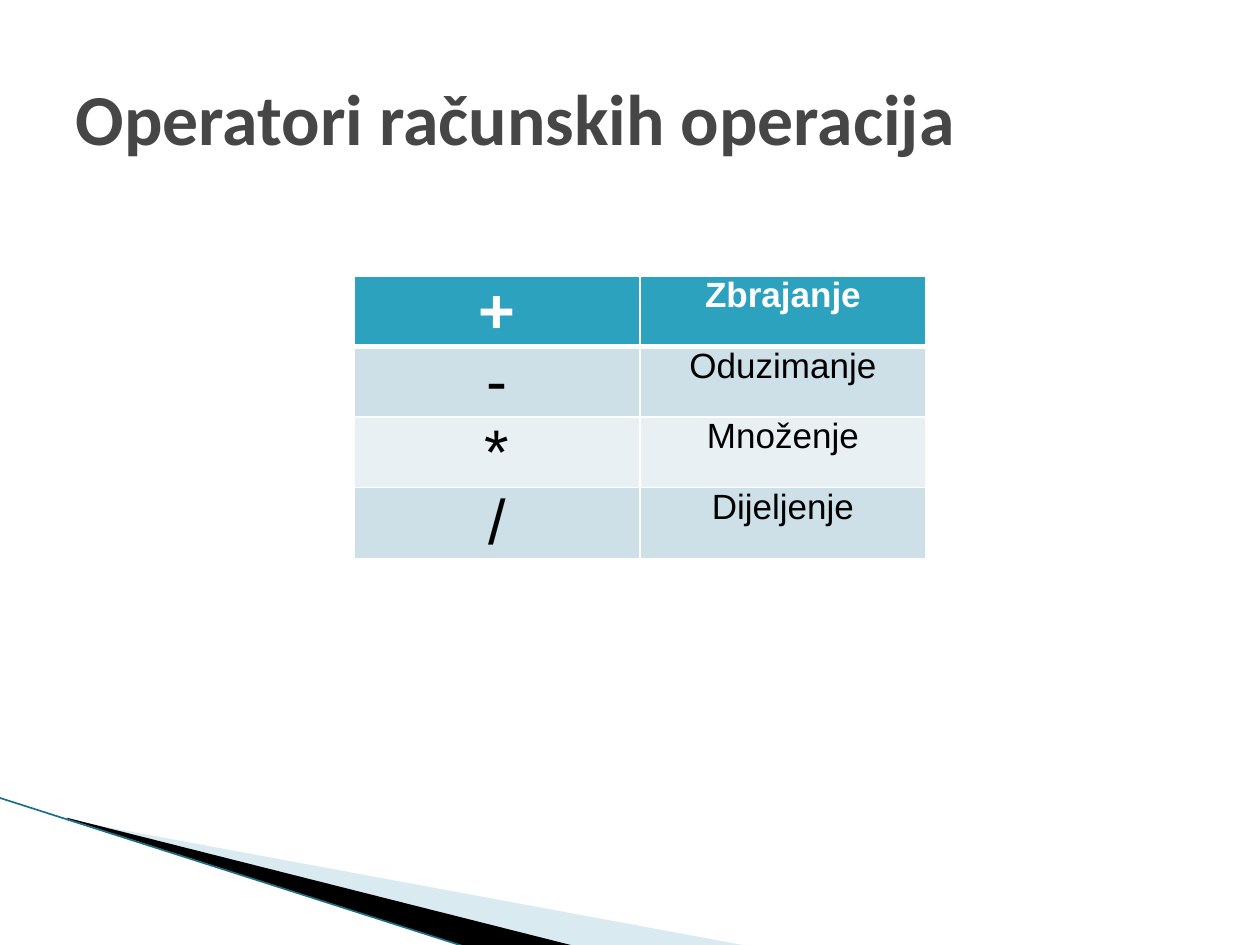
from typing import NamedTuple

from lxml.etree import SubElement
from pptx import Presentation
from pptx.dml.color import RGBColor
from pptx.enum.shapes import MSO_CONNECTOR as Connector
from pptx.enum.text import MSO_ANCHOR as Anchor, MSO_AUTO_SIZE as AutoSize, PP_ALIGN as Align
from pptx.oxml.ns import qn
from pptx.util import Inches, Pt

WHITE = RGBColor(0xFF, 0xFF, 0xFF)
BLACK = RGBColor(0x00, 0x00, 0x00)
TITLE_GREY = RGBColor(0x46, 0x46, 0x46)
HEADER_TEAL = RGBColor(0x2D, 0xA2, 0xBF)
BAND_DARK = RGBColor(0xCD, 0xE0, 0xE8)
BAND_LIGHT = RGBColor(0xE8, 0xF0, 0xF4)
WEDGE_BLUE = RGBColor(0xA0, 0xCB, 0xDC)
EDGE_TEAL = RGBColor(0x1C, 0x70, 0x83)


class Wedge(NamedTuple):
    frame: tuple[float, float, float, float]
    points: list[tuple[float, float]]
    color: RGBColor
    opacity: int


class Operator(NamedTuple):
    symbol: str
    meaning: str


WEDGES = [
    Wedge((0.78, 5.47, 4.16, 1.58),
          [(0.55, 6.51), (5.95, 7.51), (4.56, 7.51), (0.55, 6.5)], WEDGE_BLUE, 40),
    Wedge((-0.06, 6.33, 4.16, 0.92),
          [(0.53, 6.49), (4.57, 7.51), (3.72, 7.52), (0.54, 6.5)], BLACK, 100),
]
OPERATORS = [
    Operator("+", "Zbrajanje"),
    Operator("-", "Oduzimanje"),
    Operator("*", "Množenje"),
    Operator("/", "Dijeljenje"),
]


def write(frame, text: str, *, font: str, size: float, color: RGBColor,
          bold: bool = False, align=Align.LEFT) -> None:
    paragraph = frame.paragraphs[0]
    paragraph.alignment = align
    run = paragraph.add_run()
    run.text = text
    run.font.name = font
    run.font.size = Pt(size)
    run.font.bold = bold
    run.font.color.rgb = color


def set_frame(shape, frame: tuple[float, float, float, float]) -> None:
    """Give the outline a new frame while its points stay where they are."""
    left, top, width, height = map(Inches, frame)
    shifts = {"x": shape.left - left, "y": shape.top - top}
    outline = next(shape._element.iter(qn("a:path")))
    outline.set("w", str(width))
    outline.set("h", str(height))
    for point in outline.iter(qn("a:pt")):
        for axis, shift in shifts.items():
            point.set(axis, str(int(point.get(axis)) + shift))
    shape.left, shape.top, shape.width, shape.height = left, top, width, height


def draw_wedge(slide, wedge: Wedge) -> None:
    start, *rest = [(Inches(x), Inches(y)) for x, y in wedge.points]
    builder = slide.shapes.build_freeform(*start)
    builder.add_line_segments(rest, close=True)
    shape = builder.convert_to_shape()
    set_frame(shape, wedge.frame)
    shape.shadow.inherit = False
    shape.line.fill.background()
    shape.fill.solid()
    shape.fill.fore_color.rgb = wedge.color
    if wedge.opacity < 100:
        color = shape.fill._xPr.find(qn("a:solidFill"))[0]
        SubElement(color, qn("a:alpha"), val=str(wedge.opacity * 1000))


def draw_edge(slide) -> None:
    edge = slide.shapes.add_connector(
        Connector.STRAIGHT, Inches(-0.01), Inches(6.33), Inches(3.71), Inches(7.52))
    edge.line.color.rgb = EDGE_TEAL
    edge.line.width = Pt(0.95)
    SubElement(edge._element.spPr, qn("a:effectLst"))


def add_borders(cell, **widths: float) -> None:
    properties = cell._tc.get_or_add_tcPr()
    for side, width in widths.items():
        line = SubElement(properties, qn(f"a:ln{side}"), w=str(Pt(width)))
        SubElement(SubElement(line, qn("a:solidFill")), qn("a:srgbClr"), val=str(WHITE))


def draw_operators(slide) -> None:
    table = slide.shapes.add_table(
        len(OPERATORS), 2, Inches(2.81), Inches(2.19), Inches(4.54), Inches(2.2)).table
    for row, operator in enumerate(OPERATORS):
        table.rows[row].height = Inches(0.55)
        header = row == 0
        band = HEADER_TEAL if header else BAND_DARK if row % 2 else BAND_LIGHT
        for column, (text, size) in enumerate(zip(operator, (36, 20))):
            cell = table.cell(row, column)
            cell.margin_left = cell.margin_right = Inches(0.07)
            cell.margin_top = cell.margin_bottom = 0
            add_borders(cell, L=1, R=1, T=3 if row == 1 else 1, B=3 if header else 1)
            cell.fill.solid()
            cell.fill.fore_color.rgb = band
            write(cell.text_frame, text, font="Arial", size=size, bold=header,
                  color=WHITE if header else BLACK, align=Align.CENTER)


def draw_title(slide) -> None:
    title = slide.shapes.title
    title.left, title.top = Inches(0.5), Inches(0.3)
    title.width, title.height = Inches(9), Inches(1.25)
    title.text_frame.auto_size = AutoSize.NONE
    title.text_frame.vertical_anchor = Anchor.MIDDLE
    write(title.text_frame, "Operatori računskih operacija",
          font="Calibri", size=41, color=TITLE_GREY, bold=True)


def main() -> None:
    deck = Presentation()
    deck.slide_width, deck.slide_height = Inches(10), Inches(7.5)
    slide = deck.slides.add_slide(deck.slide_layouts[5])

    # Corner decoration
    for wedge in WEDGES:
        draw_wedge(slide, wedge)
    draw_edge(slide)

    # Content
    draw_operators(slide)
    draw_title(slide)
    deck.save("out.pptx")


if __name__ == "__main__":
    main()
